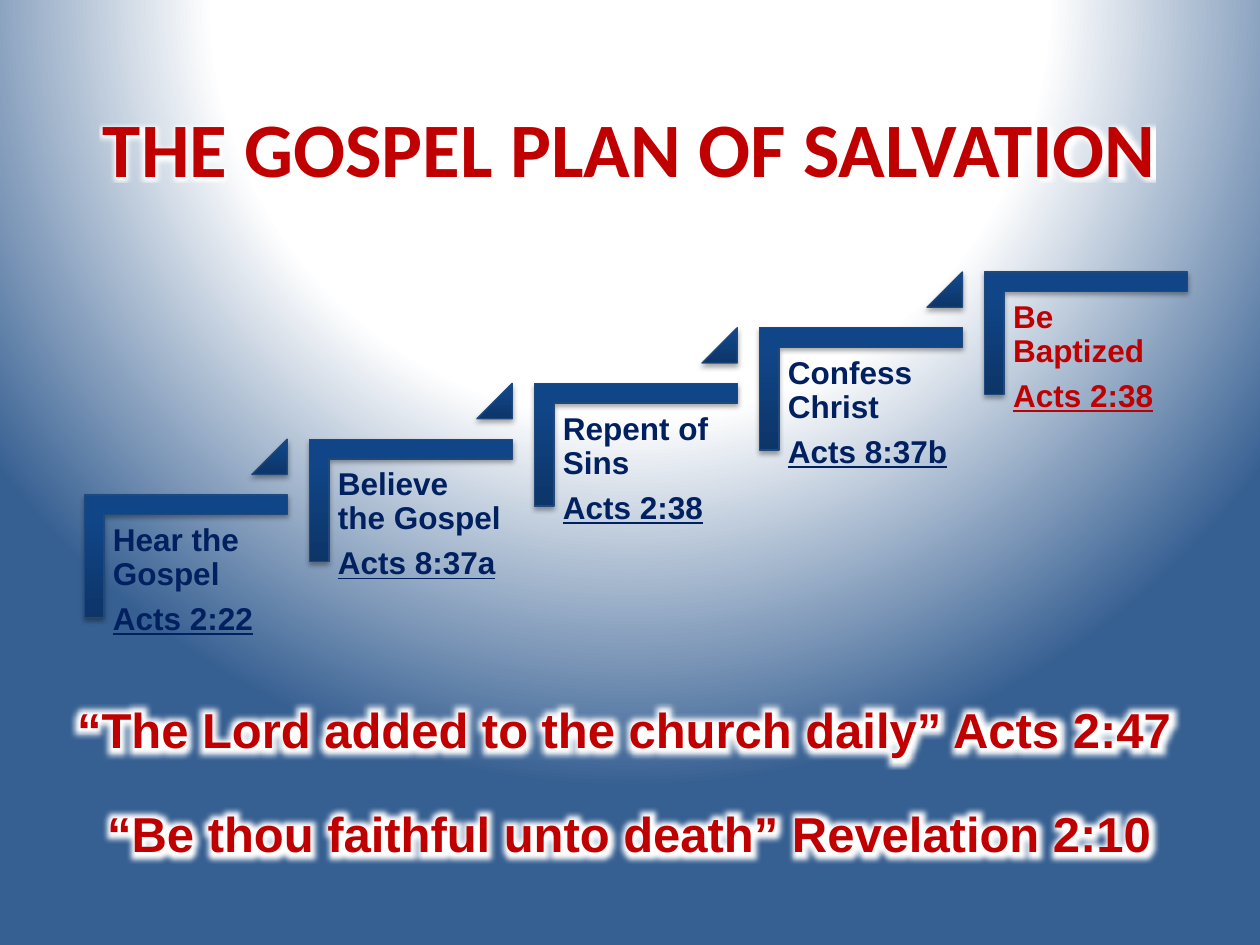
from lxml.etree import SubElement
from pptx import Presentation
from pptx.dml.color import RGBColor
from pptx.enum.shapes import MSO_SHAPE as Shape
from pptx.enum.text import MSO_ANCHOR as Anchor, MSO_AUTO_SIZE as AutoSize, PP_ALIGN as Align
from pptx.oxml import parse_xml
from pptx.oxml.ns import nsdecls, qn
from pptx.util import Pt

NAVY = RGBColor(0x00, 0x20, 0x60)
RED = RGBColor(0xC0, 0x00, 0x00)
WHITE = RGBColor(0xFF, 0xFF, 0xFF)
BLACK = RGBColor(0x00, 0x00, 0x00)
EDGE = RGBColor(0x1F, 0x49, 0x7D)
SKY = RGBColor(0x37, 0x60, 0x92)
STAIR_STOPS = [(0, RGBColor(0x0D, 0x35, 0x68)), (80, RGBColor(0x10, 0x45, 0x87)),
               (100, RGBColor(0x0E, 0x45, 0x8A))]
SKY_STOPS = [(0, WHITE), (53, WHITE), (100, SKY)]
UPWARD = '<a:lin ang="16200000" scaled="0"/>'
FROM_ABOVE = ('<a:path path="circle">'
              '<a:fillToRect l="50000" t="-80000" r="50000" b="180000"/></a:path>')

STEPS = [
    ("Hear the Gospel", "Acts 2:22", NAVY),
    ("Believe the Gospel", "Acts 8:37a", NAVY),
    ("Repent of Sins", "Acts 2:38", NAVY),
    ("Confess Christ", "Acts 8:37b", NAVY),
    ("Be Baptized", "Acts 2:38", RED),
]
PROMISES = [
    ("“The Lord added to the church daily” Acts 2:47", -9.4, 396),
    ("“Be thou faithful unto death” Revelation 2:10", -6.5, 455.8),
]
STEP_WIDTH, STEP_HEIGHT, RUN, RISE = 116, 70, 128.6, 31.86
MARKER, BAR_RATIO = 20.2, 0.161


def gradient(stops, direction):
    """Return a gradient fill element that ignores shape rotation."""
    marks = "".join(f'<a:gs pos="{at * 1000}"><a:srgbClr val="{color}"/></a:gs>'
                    for at, color in stops)
    return parse_xml(f'<a:gradFill {nsdecls("a")} rotWithShape="0">'
                     f'<a:gsLst>{marks}</a:gsLst>{direction}</a:gradFill>')


def add_effect(effects, kind, color, alpha, **lengths):
    """Add a glow or shadow of the given colour to an effect list."""
    effect = SubElement(effects, qn(f"a:{kind}"),
                        {name: str(value) for name, value in lengths.items()})
    tint = SubElement(effect, qn("a:srgbClr"), val=str(color))
    SubElement(tint, qn("a:alpha"), val=str(alpha * 1000))


def add_run(paragraph, text, font_name, size, color):
    """Add a bold run and return it."""
    run = paragraph.add_run()
    run.text = text
    run.font.name, run.font.size, run.font.bold = font_name, Pt(size), True
    run.font.color.rgb = color
    return run


def paint_background(slide):
    """Spread the radial sky gradient over the slide."""
    slide.background.fill.solid()
    backdrop = slide.element.xpath(".//p:bgPr")[0]
    backdrop.replace(backdrop[0], gradient(SKY_STOPS, FROM_ABOVE))


def style_stair(stair):
    """Give a stair part its gradient, thin edge and soft shadow."""
    stair.fill.solid()
    properties = stair.element.spPr
    properties.replace(properties.find(qn("a:solidFill")), gradient(STAIR_STOPS, UPWARD))
    stair.line.color.rgb = EDGE
    stair.line.width = Pt(0.75)
    stair.shadow.inherit = False
    add_effect(properties.find(qn("a:effectLst")), "outerShdw", BLACK, 35,
               blurRad=Pt(3.1), dist=Pt(1.8), dir=5400000, rotWithShape=0)


def add_step(slide, left, top, deed, verse, color):
    """Draw one stair corner with its deed and verse."""
    inset = (STEP_WIDTH - STEP_HEIGHT) / 2
    corner = slide.shapes.add_shape(Shape.CORNER, Pt(left + inset), Pt(top - inset),
                                    Pt(STEP_HEIGHT), Pt(STEP_WIDTH))
    corner.rotation = 90
    corner.adjustments[0] = corner.adjustments[1] = BAR_RATIO
    style_stair(corner)

    label = slide.shapes.add_textbox(Pt(left + 11), Pt(top + 11.5), Pt(105), Pt(92)).text_frame
    label.word_wrap = True
    label.margin_left = label.margin_right = label.margin_top = label.margin_bottom = Pt(5.4)
    deed_line, verse_line = label.paragraphs[0], label.add_paragraph()
    for line, text in ((deed_line, deed), (verse_line, verse)):
        line.line_spacing, line.space_after = 0.9, Pt(6.3)
        add_run(line, text, "Arial", 18, color).font.underline = line is verse_line or None


def add_marker(slide, left, top):
    """Draw the small triangle that leads up to the next step."""
    marker = slide.shapes.add_shape(Shape.ISOSCELES_TRIANGLE, Pt(left), Pt(top),
                                    Pt(MARKER), Pt(MARKER))
    marker.adjustments[0] = 1
    style_stair(marker)


def add_staircase(slide, left, top):
    """Climb from the first step, whose corner is at left and top."""
    for index, step in enumerate(STEPS):
        step_left, step_top = left + index * RUN, top - index * RISE
        add_step(slide, step_left, step_top, *step)
        if index < len(STEPS) - 1:
            add_marker(slide, step_left + STEP_WIDTH - MARKER, step_top - RISE)


def fill_banner(banner, box, text, font_name, size, glow):
    """Place a centred red line with a white glow in the given box."""
    banner.left, banner.top, banner.width, banner.height = map(Pt, box)
    frame = banner.text_frame
    frame.word_wrap, frame.auto_size = True, AutoSize.SHAPE_TO_FIT_TEXT
    frame.vertical_anchor = Anchor.TOP
    line = frame.paragraphs[0]
    line.alignment = Align.CENTER
    add_run(line, text, font_name, size, RED)
    effects = parse_xml(f'<a:effectLst {nsdecls("a")}/>')
    add_effect(effects, "glow", WHITE, 100, rad=Pt(glow))
    banner.element.xpath(".//a:rPr/a:solidFill")[0].addnext(effects)


def main():
    """Build the slide and save it."""
    deck = Presentation()
    deck.slide_width, deck.slide_height = Pt(720), Pt(540)
    slide = deck.slides.add_slide(deck.slide_layouts[5])
    paint_background(slide)
    add_staircase(slide, 48.1, 282.8)
    fill_banner(slide.shapes.title, (30, 54, 660, 60.6),
                "THE GOSPEL PLAN OF SALVATION", "Calibri", 44, 5)
    for text, left, top in PROMISES:
        box = (left, top, 732, 41.2)
        fill_banner(slide.shapes.add_textbox(*map(Pt, box)), box, text, "Arial", 28, 18)
    deck.save("out.pptx")


if __name__ == "__main__":
    main()
